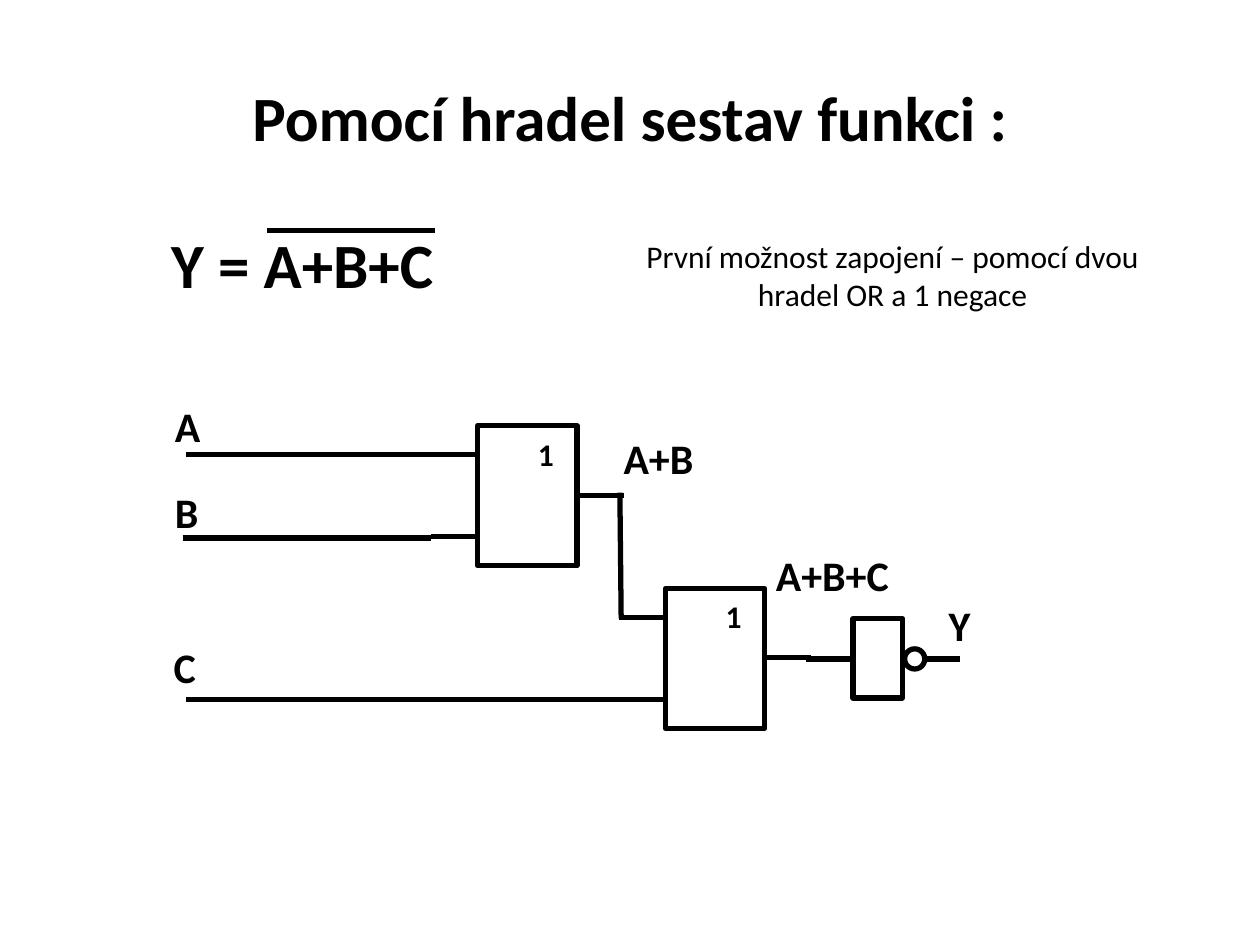
import pptx
import pptx.util
import pptx.dml.color
import pptx.enum.shapes
import pptx.enum.text
import pptx.oxml
from dataclasses import dataclass

PX = 9144  # EMU per px, 100 px to the inch
SHAPE = pptx.enum.shapes.MSO_SHAPE
ALIGN = pptx.enum.text.PP_ALIGN
ANCHOR = pptx.enum.text.MSO_ANCHOR


@dataclass(frozen=True)
class Theme:
    font: str = "Calibri"
    ink: str = "000000"
    paper: str = "FFFFFF"
    heading: int = 36
    signal: int = 24
    note: int = 18
    stroke: int = 3


THEME = Theme()


def px(*lengths):
    return [pptx.util.Emu(length * PX) for length in lengths]


def color(code):
    return pptx.dml.color.RGBColor.from_string(code)


def apply_format(target, values):
    for name, value in values.items():
        setattr(target, name, value)


def write(shape, text, size, bold=True, align=ALIGN.LEFT, anchor=ANCHOR.TOP):
    apply_format(shape.text_frame, {"word_wrap": True, "vertical_anchor": anchor})
    paragraph = shape.text_frame.paragraphs[0]
    paragraph.alignment = align
    run = paragraph.add_run()
    run.text = text
    apply_format(run.font, {"name": THEME.font, "size": pptx.util.Pt(size), "bold": bold})
    run.font.color.rgb = color(THEME.ink)


def set_title(slide, text, left, top, width, height):
    title = slide.shapes.title
    apply_format(title, dict(zip(("left", "top", "width", "height"),
                                 px(left, top, width, height))))
    write(title, text, THEME.heading, align=ALIGN.CENTER, anchor=ANCHOR.MIDDLE)


def add_label(slide, text, left, top, width, height, size=THEME.signal, **style):
    box = slide.shapes.add_textbox(*px(left, top, width, height))
    write(box, text, size, **style)


def stroke(line):
    line.color.rgb = color(THEME.ink)
    line.width = pptx.util.Pt(THEME.stroke)


def add_wire(slide, x1, y1, x2, y2):
    wire = slide.shapes.add_connector(
        pptx.enum.shapes.MSO_CONNECTOR.STRAIGHT, *px(x1, y1, x2, y2))
    stroke(wire.line)
    properties = wire.element.spPr
    properties.append(properties.makeelement(pptx.oxml.ns.qn("a:effectLst"), {}))


def add_outline(slide, kind, left, top, width, height, filled=True):
    shape = slide.shapes.add_shape(kind, *px(left, top, width, height))
    shape.shadow.inherit = False
    if filled:
        shape.fill.solid()
        shape.fill.fore_color.rgb = color(THEME.paper)
    else:
        shape.fill.background()
    stroke(shape.line)


def add_or_gate(slide, left, top):
    width, height, lead = 79, 111, 37
    right, middle = left + width, top + height // 2
    add_outline(slide, SHAPE.RECTANGLE, left, top, width, height)
    add_label(slide, "1", left + 38, top + 2, 35, 40, THEME.note)
    add_wire(slide, right, middle, right + lead, middle)
    for offset in (23, 88):
        add_wire(slide, left - lead, top + offset, left, top + offset)


def add_inverter(slide, left, top):
    width, height, bubble = 39, 63, 16
    right, middle = left + width, top + height // 2 + 1
    add_outline(slide, SHAPE.OVAL, right + 2, middle - bubble // 2, bubble, bubble,
                filled=False)
    add_outline(slide, SHAPE.RECTANGLE, left, top, width, height)
    add_wire(slide, right + 18, middle, right + 46, middle)
    add_wire(slide, left - 37, middle, left, middle)


def main():
    presentation = pptx.Presentation()
    presentation.slide_width, presentation.slide_height = px(1000, 750)
    slide = presentation.slides.add_slide(presentation.slide_layouts[5])

    # Heading, negated function and note
    set_title(slide, "Pomocí hradel sestav funkci :", 50, 30, 900, 125)
    add_label(slide, "Y = A+B+C", 126, 174, 274, 71, THEME.heading)
    add_wire(slide, 212, 183, 345, 183)
    add_label(slide, "První možnost zapojení – pomocí dvou hradel OR a 1 negace",
              473, 183, 471, 71, THEME.note, bold=False, align=ALIGN.CENTER)

    # Gates
    add_or_gate(slide, 379, 338)
    add_or_gate(slide, 528, 467)
    add_inverter(slide, 677, 491)

    # Input wires and the link between the OR gates
    for wire in ((148, 361, 347, 361), (145, 427, 342, 427),
                 (148, 555, 493, 555), (492, 391, 493, 491)):
        add_wire(slide, *wire)

    # Signal names
    for name, left, top, width in (
            ("A", 129, 313, 39), ("B", 129, 381, 39), ("C", 128, 504, 39),
            ("A+B", 485, 338, 82), ("A+B+C", 606, 431, 124), ("Y", 743, 471, 39)):
        add_label(slide, name, left, top, width, 50)

    presentation.save("out.pptx")


if __name__ == "__main__":
    main()
